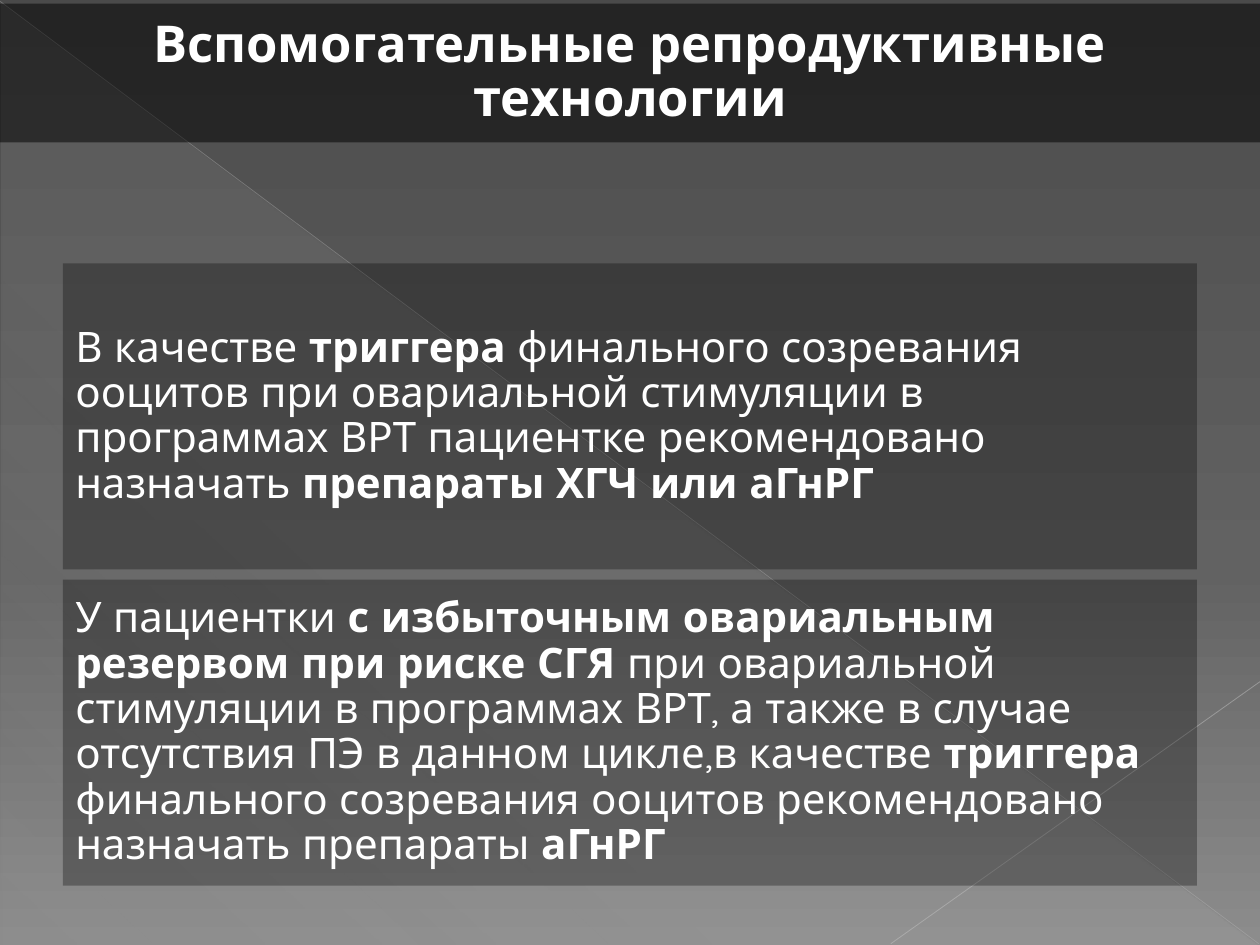
"""Build a slide on triggers of oocyte maturation in assisted reproduction."""
from dataclasses import dataclass

from lxml import etree
from pptx import Presentation
from pptx import util as u
from pptx.dml.color import RGBColor
from pptx.enum import shapes, text
from pptx.oxml.ns import qn

TITLE = [("Вспомогательные репродуктивные технологии", True)]
PANELS = [
    [
        ("В качестве ", False),
        ("триггера", True),
        (" финального созревания ооцитов при овариальной стимуляции в "
         "программах ВРТ пациентке рекомендовано назначать ", False),
        ("препараты ХГЧ или аГнРГ", True),
    ],
    [
        ("У пациентки ", False),
        ("с избыточным овариальным резервом при риске СГЯ", True),
        (" при овариальной стимуляции в программах ВРТ, а также в случае "
         "отсутствия ПЭ в данном цикле,в качестве ", False),
        ("триггера", True),
        (" финального созревания ооцитов рекомендовано назначать препараты ", False),
        ("аГнРГ", True),
    ],
]
DIAGONALS = [
    ((0, 0.01), (9.99, 7.49), "BFBFBF", 0.39, 35),
    ((10, 5.41), (7.07, 7.49), "C6C6C6", 0.47, 45),
]


@dataclass(frozen=True)
class Theme:
    font: str = "Quicksand"
    ink: str = "FFFFFF"
    band: str = "000000"
    title_size: int = 29
    body_size: int = 24
    title_opacity: int = 50
    panel_opacity: int = 30
    backdrop: tuple = ((0, "4A4A4A", 100), (60, "626262", 100), (100, "8C8C8C", 100))
    sheen: tuple = ((0, "D2D2D2", 10), (70, "D2D2D2", 8), (100, "D2D2D2", 1))


THEME = Theme()
SLIDE_WIDTH, SLIDE_HEIGHT = 10, 7.5
MARGIN, PANEL_TOP, PANEL_HEIGHT, PANEL_GAP = 0.5, 2.09, 2.43, 0.08


def set_opacity(color, percent):
    etree.SubElement(color, qn("a:alpha"), val=str(percent * 1000))


def paint_gradient(fill, element, stops, angle):
    fill.gradient()
    gradient = element.find(".//" + qn("a:gradFill"))
    stop_list = gradient.find(qn("a:gsLst"))
    for old_stop in list(stop_list):
        stop_list.remove(old_stop)
    for position, color, opacity in stops:
        stop = etree.SubElement(stop_list, qn("a:gs"), pos=str(position * 1000))
        set_opacity(etree.SubElement(stop, qn("a:srgbClr"), val=color), opacity)
    gradient.find(qn("a:lin")).set("ang", str(angle * 60000))


def add_plain_shape(page, kind, *bounds):
    box = page.shapes.add_shape(kind, *map(u.Inches, bounds))
    box.shadow.inherit = False
    box.line.fill.background()
    return box


def add_diagonal(page, start, end, color, width, opacity):
    line = page.shapes.add_connector(
        shapes.MSO_CONNECTOR.STRAIGHT, *map(u.Inches, start + end))
    line.line.color.rgb = RGBColor.from_string(color)
    line.line.width = u.Pt(width)
    properties = line._element.spPr
    set_opacity(properties.find(".//" + qn("a:srgbClr")), opacity)
    etree.SubElement(properties, qn("a:effectLst"))


def add_band(page, bounds, spans, size, opacity, inset, align):
    box = add_plain_shape(page, shapes.MSO_SHAPE.RECTANGLE, *bounds)
    box.fill.solid()
    box.fill.fore_color.rgb = RGBColor.from_string(THEME.band)
    set_opacity(box._element.spPr.find(".//" + qn("a:srgbClr")), opacity)
    frame = box.text_frame
    frame.word_wrap = True
    frame.vertical_anchor = text.MSO_ANCHOR.MIDDLE
    frame.margin_left = frame.margin_right = u.Inches(inset)
    frame.margin_top = frame.margin_bottom = u.Inches(inset)
    para = frame.paragraphs[0]
    para.alignment = align
    para.line_spacing = 0.9
    para.font.name = THEME.font
    para.font.size = u.Pt(size)
    para.font.color.rgb = RGBColor.from_string(THEME.ink)
    for wording, bold in spans:
        span = para.add_run()
        span.text = wording
        span.font.bold = bold


def main():
    deck = Presentation()
    deck.slide_width, deck.slide_height = u.Inches(SLIDE_WIDTH), u.Inches(SLIDE_HEIGHT)
    page = deck.slides.add_slide(deck.slide_layouts[6])
    paint_gradient(page.background.fill, page._element, THEME.backdrop, 90)
    triangle = add_plain_shape(
        page, shapes.MSO_SHAPE.RIGHT_TRIANGLE, 0.01, 0.02, 9.98, 7.48)
    paint_gradient(triangle.fill, triangle._element, THEME.sheen, 133)
    for diagonal in DIAGONALS:
        add_diagonal(page, *diagonal)
    for index, spans in enumerate(PANELS):
        top = PANEL_TOP + index * (PANEL_HEIGHT + PANEL_GAP)
        bounds = (MARGIN, top, SLIDE_WIDTH - 2 * MARGIN, PANEL_HEIGHT)
        add_band(page, bounds, spans, THEME.body_size, THEME.panel_opacity,
                 0.1, text.PP_ALIGN.LEFT)
    add_band(page, (0, 0.03, SLIDE_WIDTH, 1.1), TITLE, THEME.title_size,
             THEME.title_opacity, 0.12, text.PP_ALIGN.CENTER)
    deck.save("out.pptx")


if __name__ == "__main__":
    main()
